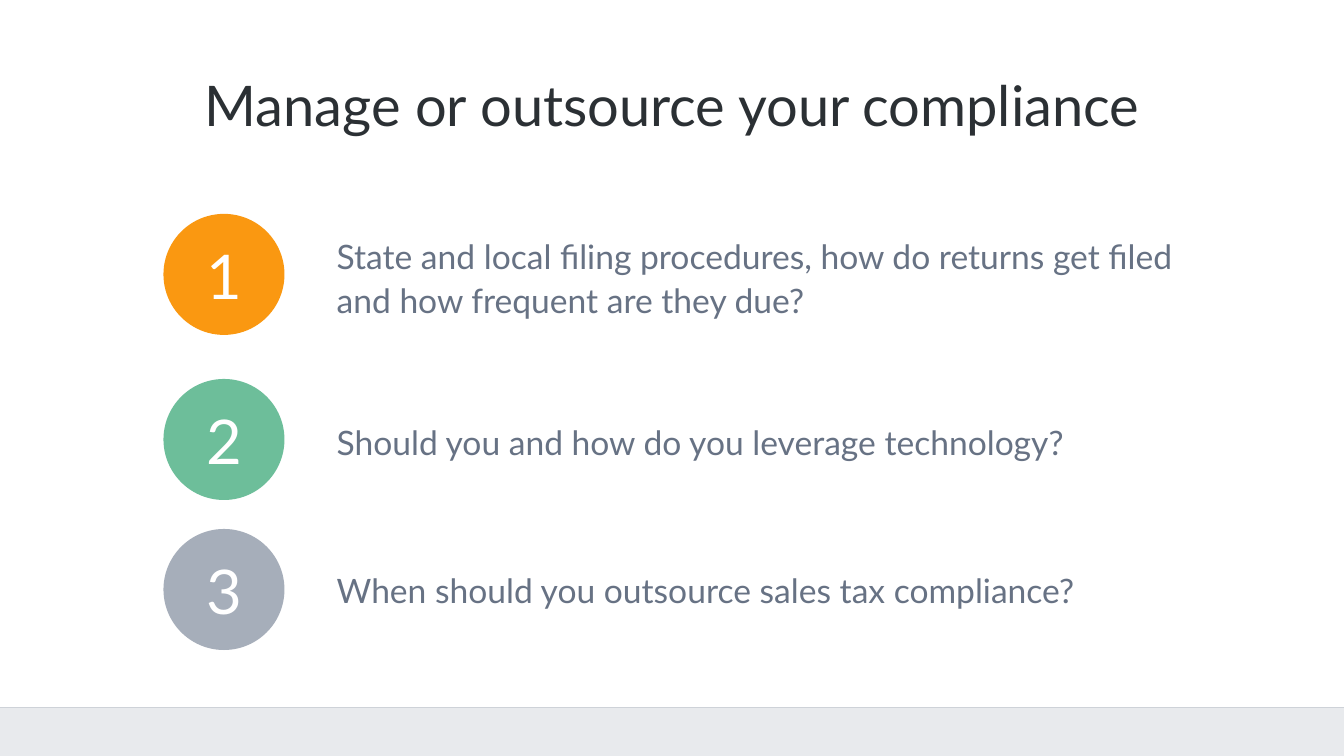
"""Build the slide on managing or outsourcing compliance."""
from lxml import etree
from pptx import Presentation
from pptx import util as u
from pptx.dml.color import RGBColor
from pptx.enum import shapes, text
from pptx.oxml import ns

COLORS = {
    "title": "2B3034", "body": "677284", "number": "FFFFFF",
    "footer": "E8EAED", "rule": "CED2D8",
    "orange": "FA9811", "green": "6DBE9A", "grey": "A6AEBA",
}
WIDTH, HEIGHT = u.Cm(33.87), u.Cm(19.05)
FOOTER_TOP = u.Cm(17.83)
CIRCLE_SIZE = u.Cm(3.05)
QUESTIONS = [
    ("State and local filing procedures, how do returns get filed "
     "and how frequent are they due?", 69.5),
    ("Should you and how do you leverage technology?", 74),
    ("When should you outsource sales tax compliance?", 0),
]
CIRCLES = [("orange", 5.39), ("green", 9.55), ("grey", 13.33)]


def write(para, words, *, size, color, align, spacing=1.0, after=0):
    """Put formatted words into a paragraph."""
    para.alignment = align
    para.line_spacing = spacing
    para.space_before = u.Pt(0)
    para.space_after = u.Pt(after)
    span = para.add_run()
    span.text = words
    span.font.name = "Lato"
    span.font.size = u.Pt(size)
    span.font.color.rgb = RGBColor.from_string(COLORS[color])


def paint(shape, color):
    """Give a shape a plain fill without line or shadow."""
    shape.shadow.inherit = False
    shape.fill.solid()
    shape.fill.fore_color.rgb = RGBColor.from_string(COLORS[color])
    shape.line.fill.background()


deck = Presentation()
deck.slide_width, deck.slide_height = WIDTH, HEIGHT
page = deck.slides.add_slide(deck.slide_layouts[1])

footer = page.shapes.add_shape(
    shapes.MSO_SHAPE.RECTANGLE, 0, FOOTER_TOP, WIDTH, HEIGHT - FOOTER_TOP)
paint(footer, "footer")
rule = page.shapes.add_connector(
    shapes.MSO_CONNECTOR.STRAIGHT, 0, FOOTER_TOP, WIDTH, FOOTER_TOP)
rule.line.color.rgb = RGBColor.from_string(COLORS["rule"])
rule.line.width = u.Pt(0.75)
etree.SubElement(rule.element.spPr, ns.qn("a:effectLst"))

title, body = page.shapes.title, page.placeholders[1]
for box, area in ((title, (1.55, 1.02, 30.78, 3.43)),
                  (body, (8.23, 5.05, 22.15, 11.1))):
    box.left, box.top, box.width, box.height = map(u.Cm, area)
    box.text_frame.word_wrap = True
    box.text_frame.auto_size = text.MSO_AUTO_SIZE.NONE
    box.text_frame.vertical_anchor = text.MSO_ANCHOR.MIDDLE

write(title.text_frame.paragraphs[0], "Manage or outsource your compliance",
      size=40, color="title", align=text.PP_ALIGN.CENTER, spacing=0.9)

for index, (question, after) in enumerate(QUESTIONS):
    frame = body.text_frame
    para = frame.add_paragraph() if index else frame.paragraphs[0]
    write(para, question, size=24, color="body", align=text.PP_ALIGN.LEFT,
          spacing=1.1, after=after)
    properties = para._p.get_or_add_pPr()
    properties.set("marL", "0")
    properties.set("indent", "0")
    etree.SubElement(properties, ns.qn("a:buNone"))

for number, (color, top) in enumerate(CIRCLES, start=1):
    circle = page.shapes.add_shape(
        shapes.MSO_SHAPE.OVAL, u.Cm(4.12), u.Cm(top), CIRCLE_SIZE, CIRCLE_SIZE)
    paint(circle, color)
    frame = circle.text_frame
    frame.margin_left = frame.margin_right = 0
    frame.margin_top = frame.margin_bottom = 0
    frame.vertical_anchor = text.MSO_ANCHOR.MIDDLE
    write(frame.paragraphs[0], str(number), size=44, color="number",
          align=text.PP_ALIGN.CENTER)

deck.save("out.pptx")
